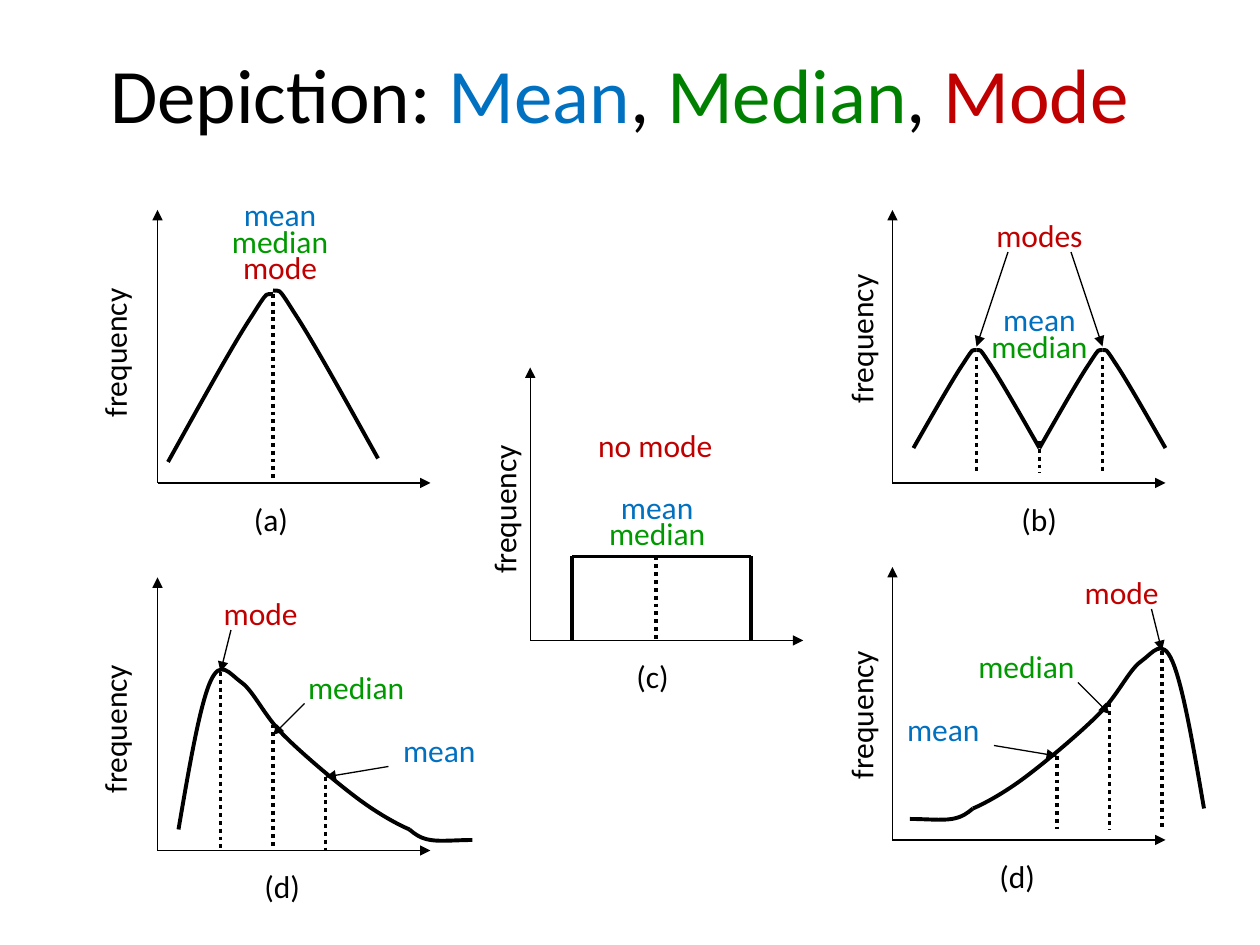
from lxml import etree
from pptx import Presentation
from pptx.dml.color import RGBColor
from pptx.enum.dml import MSO_LINE
from pptx.enum.shapes import MSO_CONNECTOR
from pptx.enum.text import MSO_ANCHOR, MSO_AUTO_SIZE, PP_ALIGN
from pptx.oxml.ns import qn
from pptx.util import Pt

STRAIGHT = MSO_CONNECTOR.STRAIGHT
DOTTED = MSO_LINE.ROUND_DOT
MIDDLE = MSO_ANCHOR.MIDDLE
GROW = MSO_AUTO_SIZE.SHAPE_TO_FIT_TEXT
LEFT, CENTER = PP_ALIGN.LEFT, PP_ALIGN.CENTER

FONT = "Calibri"
BLACK, BLUE, GREEN, RED = "000000", "0070C0", "009900", "C00000"
TITLE_GREEN = "008000"
AXIS = 156
THIN, THICK = 0.75, 2.25
LABELS = {
    "mean": (56, BLUE),
    "median": (73, GREEN),
    "mode": (58, RED),
    "modes": (64, RED),
    "no mode": (81, RED),
}
SLOPE = [(1, 1), (0.68, 0.64), (0.37, 0.29), (0.2, 0.13), (0.03, -0.04), (0.07, 0.01), (0, 0)]
SKEWED = [
    (102, 474), (108, 439), (114, 404), (120, 390), (126, 376), (131, 385), (138, 390),
    (145, 395), (151, 409), (162, 420), (173, 431), (192, 447), (204, 456),
    (216, 465), (227, 471), (234, 474),
]
SKEWED_TAIL = [(234, 474), (237, 476.5), (240, 479), (246, 480), (252, 481), (261, 480), (270, 480)]


def rgb(value):
    """Return the colour for a hex string."""
    return RGBColor.from_string(value)


def write(p, text, size=18, color=BLACK):
    """Add one formatted run to a paragraph."""
    r = p.add_run()
    r.text = text
    r.font.name = FONT
    r.font.size = Pt(size)
    r.font.color.rgb = rgb(color)


def text_box(s, lines, cx, top, width, height, align=CENTER, spacing=None, rotation=0):
    """Add a text box centred on cx, one paragraph for each (text, colour)."""
    sp = s.shapes.add_textbox(Pt(cx - width / 2), Pt(top), Pt(width), Pt(height))
    sp.rotation = rotation
    tf = sp.text_frame
    tf.word_wrap = False
    tf.auto_size = GROW
    for i, (text, color) in enumerate(lines):
        p = tf.add_paragraph() if i else tf.paragraphs[0]
        p.alignment = align
        p.line_spacing = spacing
        write(p, text, color=color)


def label(s, words, cx, top):
    """Add the named measures as tightly stacked coloured lines."""
    width = max(LABELS[word][0] for word in words)
    lines = [(word, LABELS[word][1]) for word in words]
    text_box(s, lines, cx, top, width, 10 + 14 * len(words), spacing=0.7)


def line(s, start, end, width=THIN, dash=None, arrow=False):
    """Add a straight black line, optionally dotted or with an arrowhead."""
    sp = s.shapes.add_connector(STRAIGHT, *(Pt(v) for v in (*start, *end)))
    sp.line.color.rgb = rgb(BLACK)
    sp.line.width = Pt(width)
    if dash:
        sp.line.dash_style = dash
    spPr = sp.element.spPr
    if arrow:
        etree.SubElement(spPr.find(qn("a:ln")), qn("a:tailEnd"), type="triangle")
    etree.SubElement(spPr, qn("a:effectLst"))


def dots(s, x, top, bottom):
    """Add a vertical dotted marker."""
    line(s, (x, top), (x, bottom), THICK, DOTTED)


def curve(s, points):
    """Add an open Bézier outline from a start point and triples of points."""
    start, *rest = [(Pt(x), Pt(y)) for x, y in points]
    builder = s.shapes.build_freeform(*start)
    builder.add_line_segments(rest, close=False)
    sp = builder.convert_to_shape()
    sp.shadow.inherit = False
    sp.fill.background()
    sp.line.color.rgb = rgb(BLACK)
    sp.line.width = Pt(THICK)
    outline = next(sp.element.iter(qn("a:path")))
    segments = outline.findall(qn("a:lnTo"))
    for i in range(0, len(segments), 3):
        bezier = etree.SubElement(outline, qn("a:cubicBezTo"))
        for segment in segments[i:i + 3]:
            bezier.append(segment[0])
            outline.remove(segment)


def slope(s, x, y, run, drop):
    """Add one side of a peak at x, y; a negative run goes left."""
    curve(s, [(x + run * dx, y + drop * dy) for dx, dy in SLOPE])


def axes(s, x, y, caption, caption_dx, freq_dx, freq_dy):
    """Add a pair of axes from their origin, with caption and axis title."""
    line(s, (x, y), (x, y - AXIS), arrow=True)
    line(s, (x, y), (x + AXIS, y), arrow=True)
    text_box(s, [(caption, BLACK)], x + caption_dx, y + 6, 35, 29, LEFT)
    text_box(s, [("frequency", BLACK)], x - freq_dx, y - freq_dy - 14.5, 89, 29, LEFT, rotation=270)


def symmetric(s):
    """Draw the distribution with one peak."""
    axes(s, 90, 276, "(a)", 65.5, 24.5, 75)
    slope(s, 156, 168, -60, 96)
    slope(s, 156, 166, 60, 96)
    dots(s, 156, 168, 276)
    label(s, ["mean", "median", "mode"], 160, 114)


def bimodal(s):
    """Draw the distribution with two peaks."""
    axes(s, 510, 276, "(b)", 84, 18, 83)
    for peak, inner in ((558, 576), (630, 612)):
        slope(s, peak, 200, -36, 56)
        slope(s, peak, 200, 36, 56)
        dots(s, peak, 204, 270)
        line(s, (inner, 144), (peak, 198), arrow=True)
    dots(s, 594, 252, 270)
    label(s, ["modes"], 594, 126)
    label(s, ["mean", "median"], 594, 174)


def uniform(s):
    """Draw the flat distribution."""
    axes(s, 303, 366, "(c)", 71, 15, 75.5)
    left, right, top, bottom = 327, 429, 318, 366
    line(s, (left, bottom), (left, top), THICK)
    line(s, (left, top), (right, top), THICK)
    line(s, (right, bottom), (right, top), THICK)
    dots(s, 375, top, bottom)
    label(s, ["no mode"], 374.5, 246)
    label(s, ["mean", "median"], 375.5, 281)


def skewed(s, place, bottom):
    """Draw a skewed distribution, passing each point through place."""
    for points in (SKEWED, SKEWED_TAIL):
        curve(s, [place(*point) for point in points])
    for word, x, top, arrow_from, arrow_to, label_at in (
        ("mode", 126, 384, (132, 360), (126, 384), (149, 342)),
        ("median", 156, 414, (174, 402), (156, 420), (203.5, 384)),
        ("mean", 186, 444, (222, 438), (186, 444), (251, 420)),
    ):
        dots(s, *place(x, top), bottom)
        line(s, place(*arrow_from), place(*arrow_to), arrow=True)
        label(s, [word], *place(*label_at))


def title(s):
    """Place and fill the title placeholder."""
    sp = s.shapes.title
    sp.left, sp.top, sp.width, sp.height = Pt(30), Pt(8), Pt(648), Pt(90)
    sp.text_frame.vertical_anchor = MIDDLE
    p = sp.text_frame.paragraphs[0]
    p.alignment = CENTER
    for text, color in (
        ("Depiction: ", BLACK), ("Mean", BLUE), (", ", BLACK),
        ("Median", TITLE_GREEN), (", ", BLACK), ("Mode", RED),
    ):
        write(p, text, size=44, color=color)


def main():
    """Build the slide and save it."""
    prs = Presentation()
    prs.slide_width, prs.slide_height = Pt(720), Pt(540)
    s = prs.slides.add_slide(prs.slide_layouts[5])
    title(s)
    symmetric(s)
    bimodal(s)
    uniform(s)
    axes(s, 90, 486, "(d)", 71.5, 24.5, 70)
    skewed(s, lambda x, y: (x, y), 486)
    axes(s, 510, 480, "(d)", 71.5, 18, 72)
    skewed(s, lambda x, y: (790 - x, y - 12), 474)
    prs.save("out.pptx")


if __name__ == "__main__":
    main()
